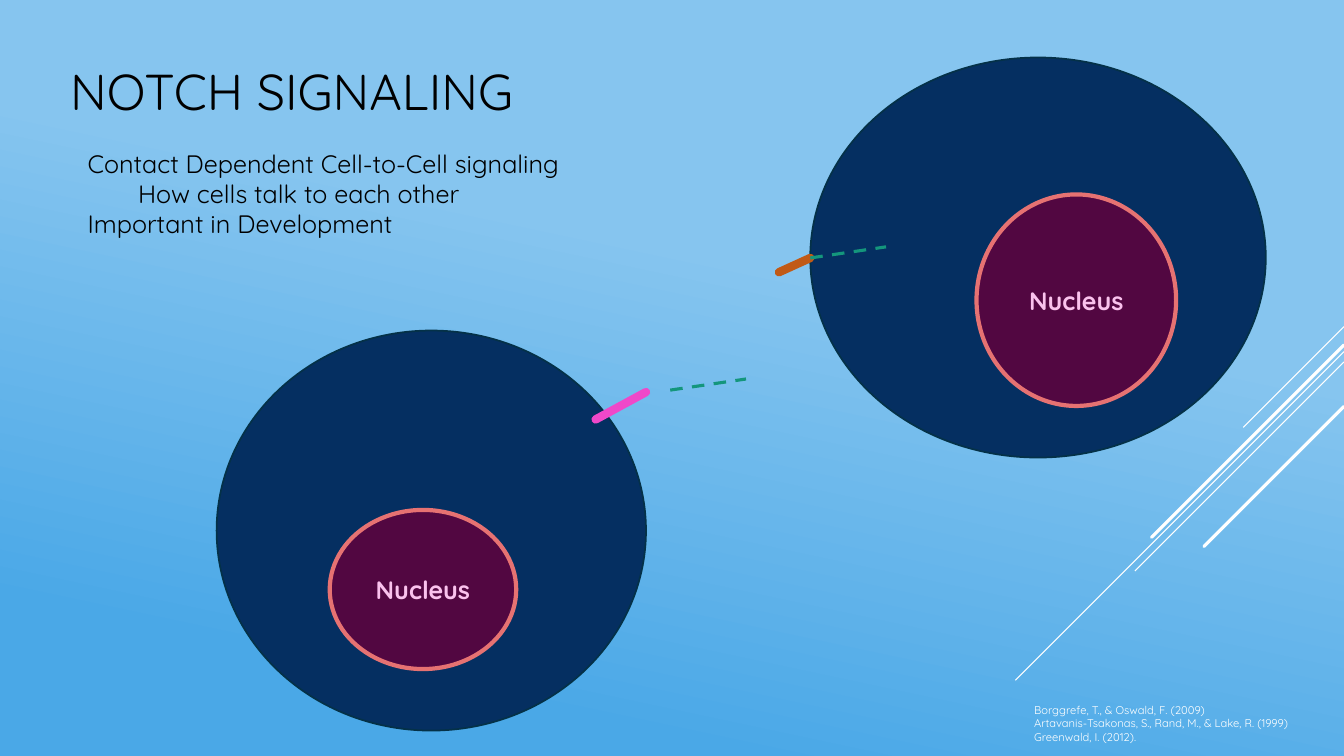
from lxml.etree import SubElement
from pptx import Presentation
from pptx.dml.color import RGBColor
from pptx.enum.dml import MSO_LINE_DASH_STYLE as Dash
from pptx.enum.shapes import MSO_CONNECTOR_TYPE as Connector, MSO_SHAPE as Shape
from pptx.enum.text import MSO_ANCHOR as Anchor, PP_ALIGN as Align
from pptx.oxml.ns import qn
from pptx.util import Cm, Pt

FONT = "Quicksand"
SLIDE_WIDTH, SLIDE_HEIGHT = 33.87, 19.05
COLORS = {
    "sky_light": "86C5EF", "sky_deep": "4AA8E7", "white": "FFFFFF", "black": "000000",
    "cell": "052F61", "cell_edge": "043148", "nucleus": "520741", "nucleus_edge": "E67272",
    "nucleus_text": "FAC2ED", "receptor": "EF48C9", "ligand": "C15A16", "domain": "14967C",
}


def color(name):
    return RGBColor.from_string(COLORS[name])


def paint_background(slide):
    fill = slide.background.fill
    fill.gradient()
    fill.gradient_angle = 258
    stops = ((0.37, "sky_light"), (0.85, "sky_deep"))
    for stop, (position, name) in zip(fill.gradient_stops, stops):
        stop.position = position
        stop.color.rgb = color(name)


def add_line(slide, start, end, name, width, dashed=False, rounded=False):
    points = [Cm(value) for value in (*start, *end)]
    connector = slide.shapes.add_connector(Connector.STRAIGHT, *points)
    connector.line.color.rgb = color(name)
    connector.line.width = Pt(width)
    if dashed:
        connector.line.dash_style = Dash.DASH
    if rounded:
        connector.line._get_or_add_ln().set("cap", "rnd")
    SubElement(connector._element.spPr, qn("a:effectLst"))


def add_ellipse(slide, box, fill, edge, width):
    ellipse = slide.shapes.add_shape(Shape.OVAL, *[Cm(value) for value in box])
    ellipse.shadow.inherit = False
    ellipse.fill.solid()
    ellipse.fill.fore_color.rgb = color(fill)
    ellipse.line.color.rgb = color(edge)
    ellipse.line.width = Pt(width)
    return ellipse


def style_paragraph(paragraph, size, name, bold=False):
    paragraph.font.name = FONT
    paragraph.font.size = Pt(size)
    paragraph.font.bold = bold
    paragraph.font.color.rgb = color(name)


def add_nucleus(slide, box):
    nucleus = add_ellipse(slide, box, "nucleus", "nucleus_edge", 3)
    frame = nucleus.text_frame
    frame.vertical_anchor = Anchor.MIDDLE
    paragraph = frame.paragraphs[0]
    paragraph.text = "Nucleus"
    paragraph.alignment = Align.CENTER
    style_paragraph(paragraph, 18, "nucleus_text", bold=True)


def add_text(slide, box, lines, size, name, anchor=Anchor.TOP):
    """Add a text box from (text, left indent in cm) lines."""
    frame = slide.shapes.add_textbox(*[Cm(value) for value in box]).text_frame
    frame.word_wrap = True
    frame.vertical_anchor = anchor
    for index, (text, indent) in enumerate(lines):
        paragraph = frame.add_paragraph() if index else frame.paragraphs[0]
        paragraph.text = text
        if indent:
            paragraph._p.get_or_add_pPr().set("marL", str(Cm(indent)))
        style_paragraph(paragraph, size, name)


def main():
    presentation = Presentation()
    presentation.slide_width = Cm(SLIDE_WIDTH)
    presentation.slide_height = Cm(SLIDE_HEIGHT)
    slide = presentation.slides.add_slide(presentation.slide_layouts[6])
    paint_background(slide)

    diagonals = ((8.23, 2.54, 0.75), (8.86, 8.28, 0.75), (9.12, 5.27, 0.75),
                 (8.69, 4.85, 2.25), (10.24, 3.53, 2.25))
    for top, run, width in diagonals:
        add_line(slide, (SLIDE_WIDTH, top), (SLIDE_WIDTH - run, top + run),
                 "white", width, rounded=width > 1)

    add_text(slide, (1.52, 0.18, 23.7, 4.19), [("NOTCH SIGNALING", 0)],
             36, "black", Anchor.MIDDLE)

    for box in ((5.46, 8.33, 10.82, 10.08), (20.42, 1.45, 11.48, 10.08)):
        add_ellipse(slide, box, "cell", "cell_edge", 1.25)
    add_line(slide, (15.01, 10.57), (16.28, 9.88), "receptor", 6, rounded=True)
    add_line(slide, (19.63, 6.86), (20.42, 6.5), "ligand", 6, rounded=True)
    for box in ((8.31, 12.85, 4.7, 4.01), (24.61, 4.9, 5.03, 5.33)):
        add_nucleus(slide, box)

    add_text(slide, (1.96, 3.61, 18.9, 2.57),
             [("Contact Dependent Cell-to-Cell signaling", 0),
              ("How cells talk to each other", 1.27),
              ("Important in Development", 0)], 18, "black")
    for left, top in ((20.42, 6.5), (16.89, 9.83)):
        add_line(slide, (left, top), (left + 1.91, top - 0.28), "domain", 2.25, dashed=True)
    add_text(slide, (25.81, 17.6, 8.23, 1.3),
             [("Borggrefe, T., & Oswald, F. (2009)", 0),
              ("Artavanis-Tsakonas, S., Rand, M., & Lake, R. (1999)", 0),
              ("Greenwald, I. (2012).", 0)], 8, "white")

    presentation.save("out.pptx")


if __name__ == "__main__":
    main()
